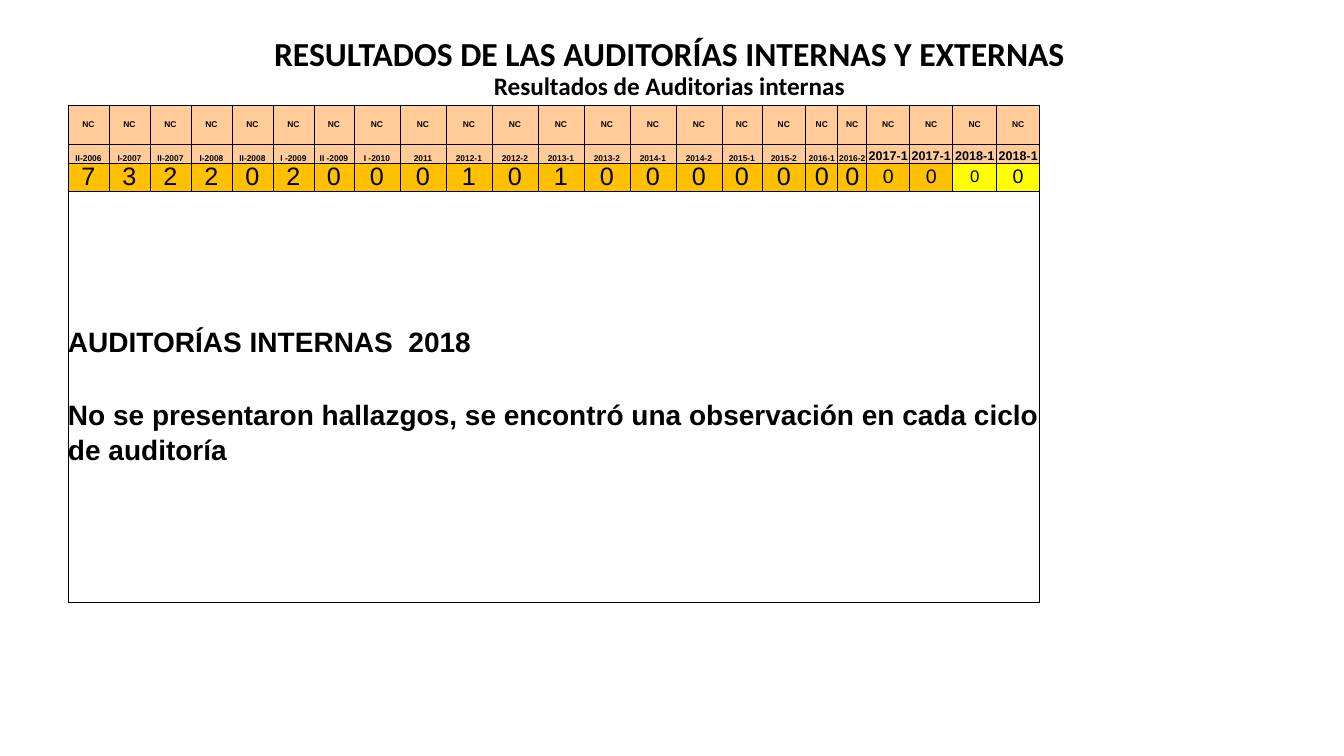
from lxml import etree
from pptx import Presentation
from pptx.dml.color import RGBColor
from pptx.enum.text import MSO_ANCHOR as Anchor, MSO_AUTO_SIZE as AutoSize, PP_ALIGN as Align
from pptx.oxml.ns import qn
from pptx.util import Emu, Pt

EMU_PER_PX = 914400 / 100.8
BLACK, WHITE, PEACH, AMBER, YELLOW = "000000", "FFFFFF", "FFCC99", "FFC000", "FFFF00"

COLUMN_WIDTHS = [41] * 6 + [40] + [46] * 8 + [40, 44, 32, 29, 43, 43, 44, 43]
ROW_HEIGHTS = [39, 19, 28, 411]
PERIODS = [
    "II-2006", "I-2007", "II-2007", "I-2008", "II-2008", "I -2009", "II -2009", "I -2010",
    "2011", "2012-1", "2012-2", "2013-1", "2013-2", "2014-1", "2014-2", "2015-1", "2015-2",
    "2016-1", "2016-2", "2017-1", "2017-1", "2018-1", "2018-1",
]
FINDINGS = [7, 3, 2, 2, 0, 2, 0, 0, 0, 1, 0, 1] + [0] * 11
PERIOD_SIZES = [6] * 19 + [9] * 4
FINDING_SIZES = [18] * 19 + [14, 14, 12, 14]
FINDING_FILLS = [AMBER] * 21 + [YELLOW] * 2
# Each line of the conclusion with the space before it, in points
CONCLUSION = [
    ("AUDITORÍAS INTERNAS  2018", 0),
    ("No se presentaron hallazgos, se encontró una observación en cada ciclo", 30),
    ("de auditoría", 3),
]


def px(length):
    return Emu(round(length * EMU_PER_PX))


def color(value):
    return RGBColor.from_string(value)


def set_font(font, name, size, bold):
    font.name, font.size, font.bold = name, Pt(size), bold
    font.color.rgb = color(BLACK)


def add_title(slide, left, top, width, height):
    title = slide.shapes.title
    title.left, title.top, title.width, title.height = map(px, (left, top, width, height))
    frame = title.text_frame
    frame.word_wrap = True
    frame.auto_size = AutoSize.NONE
    frame.vertical_anchor = Anchor.BOTTOM
    paragraph = frame.paragraphs[0]
    paragraph.alignment = Align.CENTER
    paragraph.line_spacing = 0.9
    heading = paragraph.add_run()
    heading.text = "RESULTADOS DE LAS AUDITORÍAS INTERNAS Y EXTERNAS"
    set_font(heading.font, "Calibri", 24, True)
    paragraph.add_line_break()
    subheading = paragraph.add_run()
    subheading.text = "Resultados de Auditorias internas"
    set_font(subheading.font, "Calibri", 18, True)


def style_cell(cell, fill, anchor=Anchor.MIDDLE):
    """Give a cell thin black borders, a fill and no margins."""
    properties = cell._tc.get_or_add_tcPr()
    for side in ("lnL", "lnR", "lnT", "lnB"):
        line = etree.SubElement(properties, qn(f"a:{side}"), w=str(Pt(0.5)))
        line_fill = etree.SubElement(line, qn("a:solidFill"))
        etree.SubElement(line_fill, qn("a:srgbClr"), val=BLACK)
    cell.fill.solid()
    cell.fill.fore_color.rgb = color(fill)
    cell.margin_left = cell.margin_right = cell.margin_top = cell.margin_bottom = 0
    cell.vertical_anchor = anchor


def fill_cell(cell, text, size, bold, fill, anchor=Anchor.MIDDLE):
    style_cell(cell, fill, anchor)
    paragraph = cell.text_frame.paragraphs[0]
    paragraph.text = text
    paragraph.alignment = Align.CENTER
    set_font(paragraph.font, "Arial", size, bold)


def write_conclusion(cell):
    frame = cell.text_frame
    for index, (text, space_before) in enumerate(CONCLUSION):
        paragraph = frame.add_paragraph() if index else frame.paragraphs[0]
        paragraph.text = text
        paragraph.alignment = Align.LEFT
        paragraph.space_before = Pt(space_before)
        set_font(paragraph.font, "Arial", 20, True)


def add_findings_table(slide, left, top):
    size = sum(COLUMN_WIDTHS), sum(ROW_HEIGHTS)
    table = slide.shapes.add_table(
        len(ROW_HEIGHTS), len(COLUMN_WIDTHS), *map(px, (left, top, *size))
    ).table
    table.first_row = table.horz_banding = False
    for row, height in zip(table.rows, ROW_HEIGHTS):
        row.height = px(height)
    for index, width in enumerate(COLUMN_WIDTHS):
        table.columns[index].width = px(width)
        fill_cell(table.cell(0, index), "NC", 6, True, PEACH)
        fill_cell(table.cell(1, index), PERIODS[index], PERIOD_SIZES[index], True, PEACH,
                  Anchor.BOTTOM)
        fill_cell(table.cell(2, index), str(FINDINGS[index]), FINDING_SIZES[index], False,
                  FINDING_FILLS[index])
        style_cell(table.cell(3, index), WHITE)
    conclusion = table.cell(3, 0)
    conclusion.merge(table.cell(3, len(COLUMN_WIDTHS) - 1))
    write_conclusion(conclusion)


def main():
    presentation = Presentation()
    presentation.slide_width, presentation.slide_height = px(1344), px(756)
    slide = presentation.slides.add_slide(presentation.slide_layouts.get_by_name("Title Only"))
    add_title(slide, 216, 70, 907, 36)
    add_findings_table(slide, 68, 105)
    presentation.save("out.pptx")


if __name__ == "__main__":
    main()
